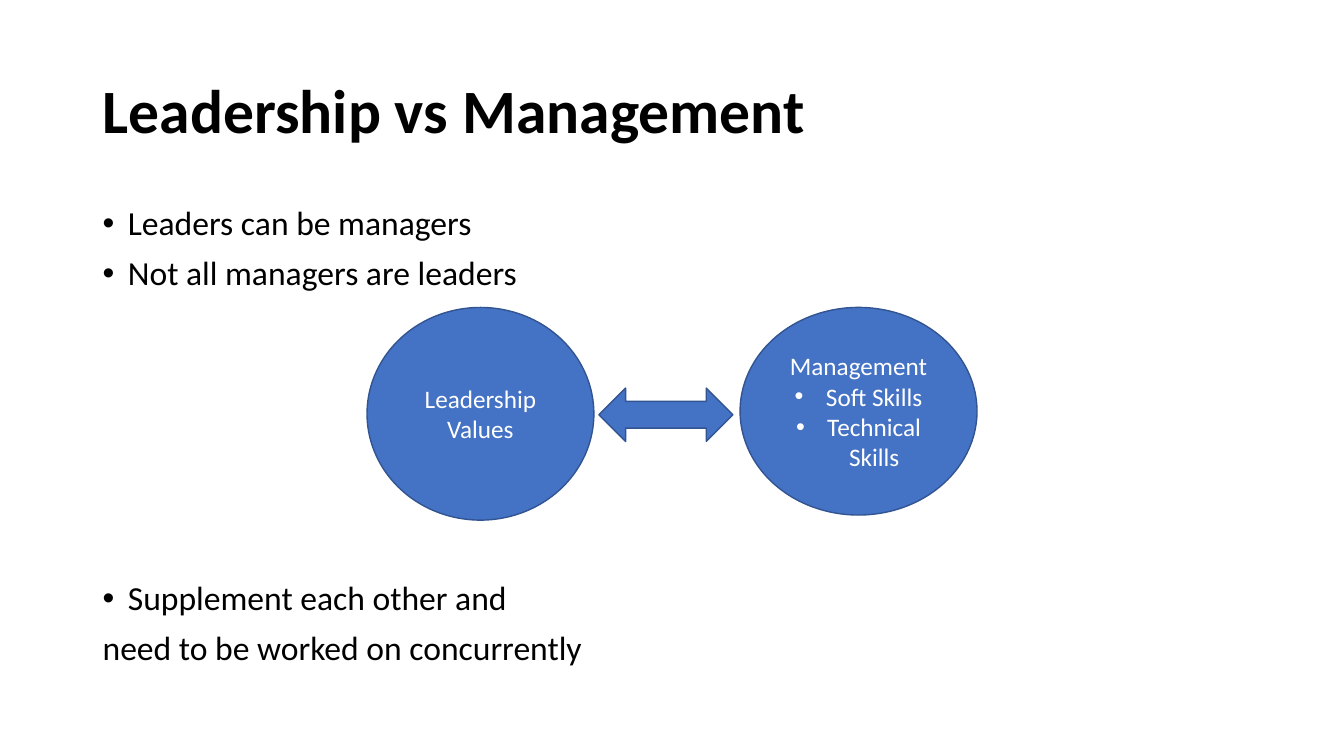
from lxml import etree
from pptx import Presentation
from pptx.dml.color import RGBColor
from pptx.enum.shapes import MSO_SHAPE
from pptx.enum.text import MSO_ANCHOR, MSO_AUTO_SIZE, PP_ALIGN
from pptx.oxml.ns import qn
from pptx.util import Inches, Pt

ELLIPSE, ARROW = MSO_SHAPE.OVAL, MSO_SHAPE.LEFT_RIGHT_ARROW
LEFT, CENTER = PP_ALIGN.LEFT, PP_ALIGN.CENTER
MIDDLE, TOP = MSO_ANCHOR.MIDDLE, MSO_ANCHOR.TOP
NO_FIT = MSO_AUTO_SIZE.NONE
BLACK, WHITE, BLUE, DARK_BLUE = "000000", "FFFFFF", "4472C4", "325491"


def color(hex_text):
    return RGBColor.from_string(hex_text)


def write(frame, lines, size, ink, align, anchor, indent=0, spacing=1.0):
    """Write (text, has bullet, points before) lines into a text frame."""
    frame.word_wrap = True
    frame.auto_size = NO_FIT
    frame.vertical_anchor = anchor
    for number, (text, bulleted, before) in enumerate(lines):
        para = frame.add_paragraph() if number else frame.paragraphs[0]
        para.text = text
        para.alignment = align
        para.line_spacing = spacing
        para.space_before = Pt(before)
        if bulleted:
            props = para._p.get_or_add_pPr()
            props.set("marL", str(Inches(indent)))
            props.set("indent", str(-Inches(indent)))
            etree.SubElement(props, qn("a:buFont")).set("typeface", "Arial")
            etree.SubElement(props, qn("a:buChar")).set("char", "•")
        para.font.name = "Calibri"
        para.font.size = Pt(size)
        para.font.color.rgb = color(ink)


deck = Presentation()
deck.slide_width, deck.slide_height = Inches(13.33), Inches(7.5)
page = deck.slides.add_slide(deck.slide_layouts[5])

# Title
title = page.shapes.title
title.left, title.top = Inches(0.92), Inches(0.4)
title.width, title.height = Inches(11.5), Inches(1.45)
write(title.text_frame, [("Leadership vs Management", False, 0)],
      44, BLACK, LEFT, MIDDLE, spacing=0.9)
title.text_frame.paragraphs[0].font.bold = True

# Statements above and below the diagram
body = page.shapes.add_textbox(Inches(0.92), Inches(2), Inches(11.5), Inches(5.1))
statements = [
    ("Leaders can be managers", True, 0),
    ("Not all managers are leaders", True, 10),
    ("Supplement each other and", True, 206),
    ("need to be worked on concurrently", False, 10),
]
write(body.text_frame, statements, 24, BLACK, LEFT, TOP, indent=0.25, spacing=0.9)

# Diagram: two ellipses joined by a double arrow
leadership = [("Leadership", False, 0), ("Values", False, 0)]
management = [("Management", False, 0), ("Soft Skills", True, 0),
              ("Technical Skills", True, 0)]
diagram = [
    (ELLIPSE, 3.64, 3.05, 2.25, 2.11, leadership),
    (ELLIPSE, 7.34, 3.05, 2.35, 2.06, management),
    (ARROW, 5.94, 3.85, 1.33, 0.53, []),
]
for kind, left, top, width, height, lines in diagram:
    shape = page.shapes.add_shape(kind, Inches(left), Inches(top),
                                  Inches(width), Inches(height))
    shape.shadow.inherit = False
    shape.fill.solid()
    shape.fill.fore_color.rgb = color(BLUE)
    shape.line.color.rgb = color(DARK_BLUE)
    shape.line.width = Pt(1)
    write(shape.text_frame, lines, 18, WHITE, CENTER, MIDDLE, indent=0.31)

deck.save("out.pptx")
